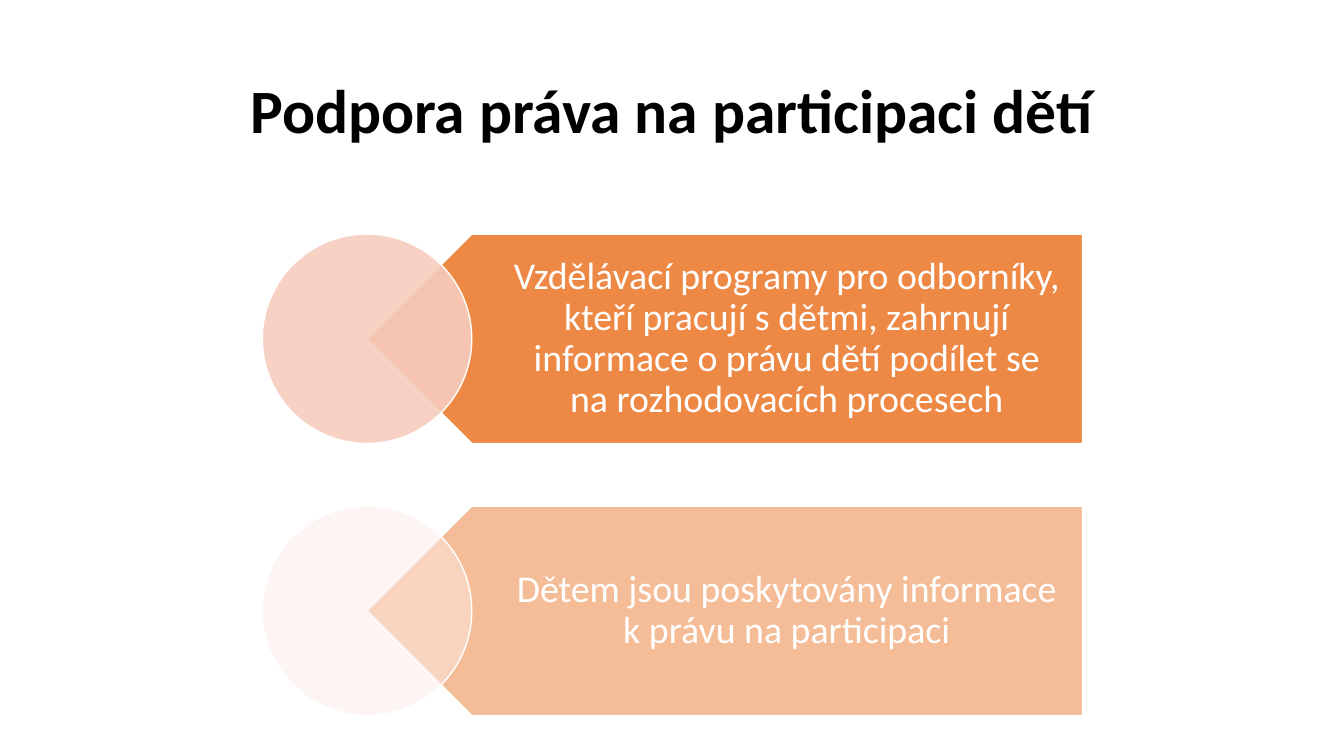
from lxml import etree
from pptx import Presentation
from pptx.dml.color import RGBColor
from pptx.enum.shapes import MSO_SHAPE
from pptx.enum.text import MSO_ANCHOR, MSO_AUTO_SIZE, PP_ALIGN
from pptx.oxml.ns import qn
from pptx.util import Pt

PENTAGON, OVAL = MSO_SHAPE.PENTAGON, MSO_SHAPE.OVAL
MIDDLE, CENTER = MSO_ANCHOR.MIDDLE, PP_ALIGN.CENTER
NO_AUTOFIT = MSO_AUTO_SIZE.NONE

BLACK = RGBColor(0x00, 0x00, 0x00)
WHITE = RGBColor(0xFF, 0xFF, 0xFF)
ORANGE = RGBColor(0xED, 0x7D, 0x31)
SALMON = RGBColor(0xF6, 0xCC, 0xBE)
BLUSH = RGBColor(0xFC, 0xEC, 0xE8)

FRAME_FORMAT = {"word_wrap": True, "auto_size": NO_AUTOFIT, "vertical_anchor": MIDDLE}
MEASURE_INSETS = {
    "margin_left": Pt(66.2),
    "margin_top": Pt(7.6),
    "margin_right": Pt(15.1),
    "margin_bottom": Pt(7.6),
}
PARAGRAPH_FORMAT = {"alignment": CENTER, "line_spacing": 0.9}
HEADING_FONT = {"name": "Calibri", "size": Pt(44), "bold": True}
MEASURE_FONT = {"name": "Calibri", "size": Pt(27)}

MEASURES = [
    (
        "Vzdělávací programy pro odborníky, kteří pracují s dětmi, zahrnují "
        "informace o právu dětí podílet se na rozhodovacích procesech",
        SALMON,
        90,
    ),
    ("Dětem jsou poskytovány informace k právu na participaci", BLUSH, 50),
]


def apply_format(target, values):
    for name, value in values.items():
        setattr(target, name, value)


def write(frame, wording, font_format, color):
    frame.text = wording
    apply_format(frame, FRAME_FORMAT)
    paragraph = frame.paragraphs[0]
    apply_format(paragraph, PARAGRAPH_FORMAT)
    font = paragraph.runs[0].font
    apply_format(font, font_format)
    font.color.rgb = color


def add_heading(slide, left, top, width, height):
    heading = slide.shapes.title
    box = {"left": Pt(left), "top": Pt(top), "width": Pt(width), "height": Pt(height)}
    apply_format(heading, box)
    write(heading.text_frame, "Podpora práva na participaci dětí", HEADING_FONT, BLACK)


def add_figure(slide, preset, left, top, width, height, color, opacity):
    figure = slide.shapes.add_shape(preset, Pt(left), Pt(top), Pt(width), Pt(height))
    figure.shadow.inherit = False
    figure.fill.solid()
    figure.fill.fore_color.rgb = color
    tint = figure.fill._xPr.find(qn("a:solidFill"))[0]
    etree.SubElement(tint, qn("a:alpha"), val=str(opacity * 1000))
    figure.line.color.rgb = WHITE
    figure.line.width = Pt(1)
    return figure


def add_measure(slide, left, top, width, height, wording, circle_color, opacity):
    plate_offset = height / 2
    text_offset = height * 3 / 4
    plate = add_figure(slide, PENTAGON, left + plate_offset, top,
                       width - plate_offset, height, ORANGE, opacity)
    plate.rotation = 180
    label = slide.shapes.add_textbox(Pt(left + text_offset), Pt(top),
                                     Pt(width - text_offset), Pt(height))
    write(label.text_frame, wording, MEASURE_FONT, WHITE)
    apply_format(label.text_frame, MEASURE_INSETS)
    add_figure(slide, OVAL, left, top, height, height, circle_color, opacity)


def add_measures(slide, left, top, width, row_height, gap):
    for row, measure in enumerate(MEASURES):
        add_measure(slide, left, top + row * (row_height + gap), width, row_height, *measure)


def main():
    deck = Presentation()
    deck.slide_width, deck.slide_height = Pt(960), Pt(540)
    slide = deck.slides.add_slide(deck.slide_layouts[5])
    add_heading(slide, 66, 28.75, 828, 104.4)
    add_measures(slide, 187.4, 167.2, 585.8, 149.6, 44.7)
    deck.save("out.pptx")


if __name__ == "__main__":
    main()
